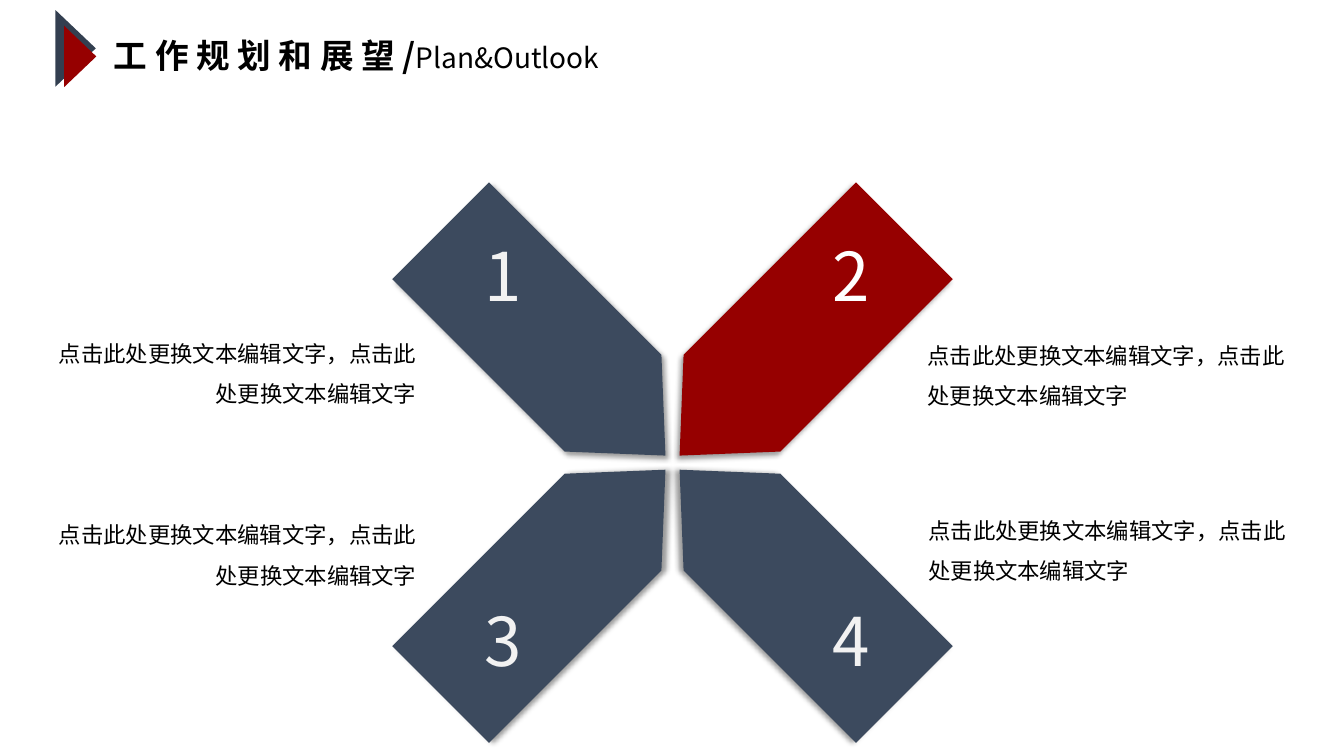
from dataclasses import dataclass

from pptx import Presentation
from pptx.dml.color import RGBColor
from pptx.enum.shapes import MSO_SHAPE
from pptx.enum.text import MSO_ANCHOR, MSO_AUTO_SIZE, PP_ALIGN
from pptx.oxml import parse_xml
from pptx.oxml.ns import nsdecls, qn
from pptx.util import Inches, Pt


@dataclass(frozen=True)
class Theme:
    """Colours, font and type sizes of the deck."""

    font: str = "Noto Sans CJK SC"
    black: str = "000000"
    white: str = "FFFFFF"
    pale: str = "F2F2F2"
    navy: str = "333F50"
    slate: str = "3C4A5E"
    red: str = "960000"
    title_size: int = 24
    subtitle_size: int = 20
    body_size: int = 16
    number_size: int = 48


class SlideBuilder:
    """Draws elements on one slide, measured in half-inch grid cells."""

    def __init__(self, page, theme):
        """Keep the slide and its theme."""
        self.page = page
        self.theme = theme

    def cells(self, *counts):
        """Turn counts of grid cells into lengths."""
        return [Inches(count * 0.5) for count in counts]

    def paint(self, shape, color):
        """Give a shape a flat fill without line or shadow."""
        shape.fill.solid()
        shape.fill.fore_color.rgb = RGBColor.from_string(color)
        shape.line.fill.background()
        shape.shadow.inherit = False

    def format_text(self, box, align, color, size, spacing=None):
        """Format the frame and the first paragraph of a text shape."""
        frame = box.text_frame
        frame.word_wrap = True
        frame.auto_size = MSO_AUTO_SIZE.SHAPE_TO_FIT_TEXT
        frame.vertical_anchor = MSO_ANCHOR.TOP
        para = frame.paragraphs[0]
        para.alignment = align
        if spacing:
            para.line_spacing = spacing
        para.font.size = Pt(size)
        para.font.color.rgb = RGBColor.from_string(color)
        para.font.name = self.theme.font
        east_asian = f'<a:ea {nsdecls("a")} typeface="{self.theme.font}"/>'
        para._p.pPr.find(qn("a:defRPr")).append(parse_xml(east_asian))
        return para

    def title(self, place, heading, subtitle):
        """Fill the title placeholder with a heading and a subtitle."""
        box = self.page.shapes.title
        box.left, box.top, box.width, box.height = self.cells(*place)
        para = self.format_text(box, PP_ALIGN.LEFT, self.theme.black, self.theme.title_size)
        for text, size, bold in (
            (heading, self.theme.title_size, True),
            (subtitle, self.theme.subtitle_size, False),
        ):
            span = para.add_run()
            span.text = text
            span.font.size = Pt(size)
            span.font.bold = bold

    def text(self, place, words, align, color, size, spacing=None):
        """Add a text box with one paragraph."""
        box = self.page.shapes.add_textbox(*self.cells(*place))
        para = self.format_text(box, align, color, size, spacing)
        para.add_run().text = words

    def marker(self, triangles):
        """Add a group of triangles that point right."""
        group = self.page.shapes.add_group_shape()
        for place, color in triangles:
            triangle = group.shapes.add_shape(MSO_SHAPE.ISOSCELES_TRIANGLE, *self.cells(*place))
            triangle.rotation = 90
            self.paint(triangle, color)

    def arm(self, points, color, shadow_angle):
        """Add a pointed arm with a soft shadow."""
        start, *others = [self.cells(*point) for point in points]
        outline = self.page.shapes.build_freeform(*start)
        outline.add_line_segments(others, close=True)
        shape = outline.convert_to_shape()
        self.paint(shape, color)
        shadow = (
            f'<a:outerShdw {nsdecls("a")} blurRad="{Pt(4)}" dist="{Pt(3)}" '
            f'dir="{shadow_angle * 60000}" algn="ctr" rotWithShape="0">'
            f'<a:srgbClr val="{self.theme.black}"><a:alpha val="40000"/></a:srgbClr>'
            "</a:outerShdw>"
        )
        shape._element.spPr.find(qn("a:effectLst")).append(parse_xml(shadow))


def main():
    """Build the plan and outlook slide."""
    theme = Theme()
    deck = Presentation()
    deck.slide_width, deck.slide_height = Inches(13.33), Inches(7.5)
    page = deck.slides.add_slide(deck.slide_layouts[5])
    builder = SlideBuilder(page, theme)

    builder.marker([
        ((0.74, 0.56, 1.52, 0.8), theme.navy),
        ((0.98, 0.8, 1.22, 0.64), theme.red),
    ])
    builder.title((2.06, 0.6, 12.42, 1), "工 作 规 划 和 展 望 /", "Plan&Outlook")

    center_x, center_y = 13.34, 9.18
    arm_outline = [(0.22, 2.14), (0.14, 0.14), (2.14, 0.22), (5.56, 3.64), (3.64, 5.56)]
    arms = [
        (-1, -1, theme.slate, 45),
        (1, -1, theme.red, 135),
        (-1, 1, theme.slate, 0),
        (1, 1, theme.slate, 180),
    ]
    for side, level, color, angle in arms:
        points = [(center_x + side * x, center_y + level * y) for x, y in arm_outline]
        builder.arm(points, color, angle)

    note = "点击此处更换文本编辑文字，点击此处更换文本编辑文字"
    notes = [
        (0.6, 6.38, PP_ALIGN.RIGHT),
        (0.6, 9.98, PP_ALIGN.RIGHT),
        (18.2, 6.42, PP_ALIGN.LEFT),
        (18.22, 9.9, PP_ALIGN.LEFT),
    ]
    for left, top, align in notes:
        builder.text((left, top, 7.86, 1.82), note, align, theme.black, theme.body_size, 1.5)

    number_colors = [theme.pale, theme.white, theme.pale, theme.pale]
    for index, color in enumerate(number_colors):
        row, column = divmod(index, 2)
        place = (9.24 + column * 6.9, 4.56 + row * 7.24, 1.5, 1.82)
        builder.text(place, str(index + 1), PP_ALIGN.CENTER, color, theme.number_size)

    deck.save("out.pptx")


if __name__ == "__main__":
    main()
